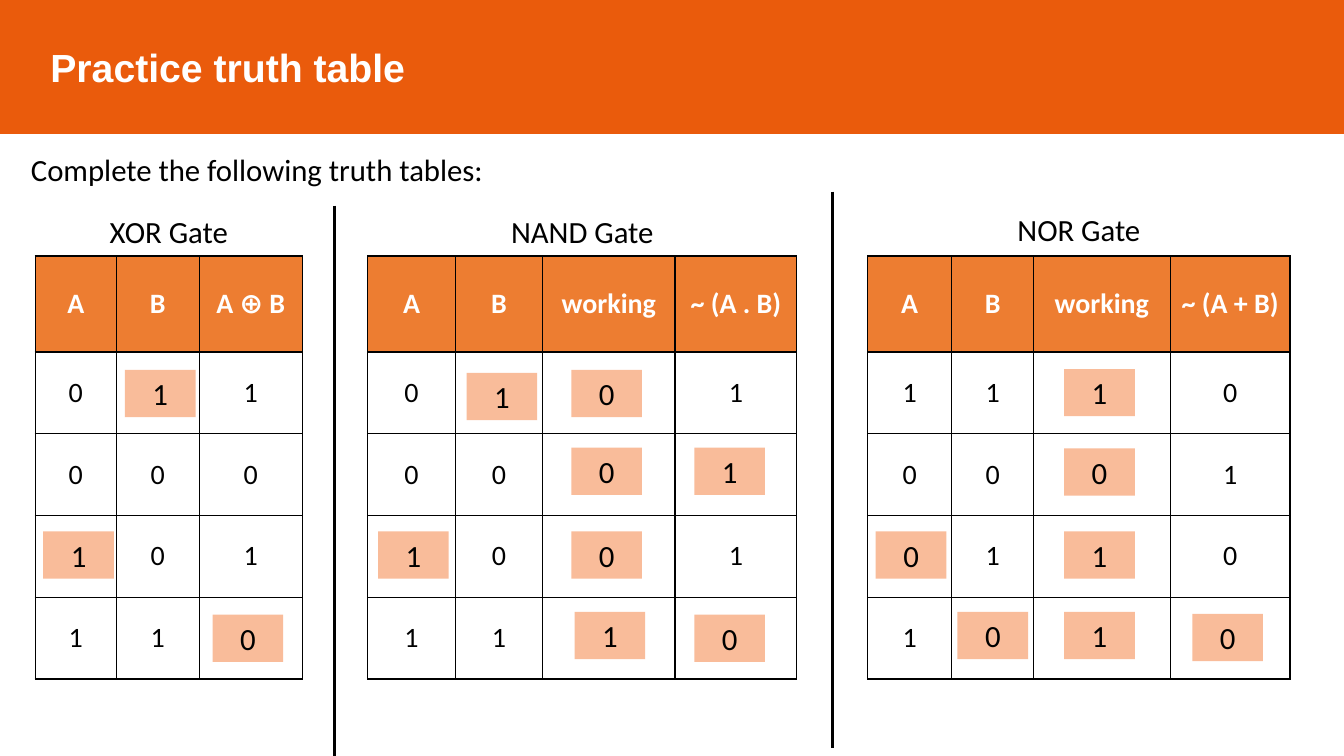
from lxml import etree
from pptx import Presentation
from pptx.dml.color import RGBColor
from pptx.enum import shapes, text
from pptx.oxml import ns
from pptx.util import Cm, Pt

# Content: a plain string is printed in its cell,
# a tuple is an answer card (digit, left, top in cm), None is an empty cell
TITLE = "Practice truth table"
INTRO = "Complete the following truth tables:"
GATES = [
    {"name": "XOR Gate", "left": 0.89, "label_top": 4.78,
     "columns": [2.04, 2.09, 2.6],
     "rows": [
         ["A", "B", "A ⊕ B"],
         ["0", ("1", 3.15, 9.32), "1"],
         ["0", "0", "0"],
         [("1", 1.09, 13.39), "0", "1"],
         ["1", "1", ("0", 5.36, 15.49)],
     ]},
    {"name": "NAND Gate", "left": 9.27, "label_top": 4.78,
     "columns": [2.2, 2.21, 3.33, 3.07],
     "rows": [
         ["A", "B", "working", "~ (A . B)"],
         ["0", ("1", 11.76, 9.4), ("0", 14.4, 9.32), "1"],
         ["0", "0", ("0", 14.4, 11.28), ("1", 17.5, 11.28)],
         [("1", 9.53, 13.39), "0", ("0", 14.4, 13.39), "1"],
         ["1", "1", ("1", 14.48, 15.42), ("0", 17.5, 15.49)],
     ]},
    {"name": "NOR Gate", "left": 21.87, "label_top": 4.72,
     "columns": [2.11, 2.07, 3.44, 3.02],
     "rows": [
         ["A", "B", "working", "~ (A + B)"],
         ["1", "1", ("1", 26.82, 9.3), "0"],
         ["0", "0", ("0", 26.82, 11.3), "1"],
         [("0", 22.07, 13.39), "1", ("1", 26.82, 13.39), "0"],
         ["1", ("0", 24.13, 15.42), ("1", 26.82, 15.42), ("0", 30.05, 15.47)],
     ]},
]
DIVIDERS = [(8.43, 5.18, 19.05), (20.98, 4.83, 18.85)]  # x, top, bottom

COLORS = {"banner": "EA5B0C", "header": "ED7D31", "answer": "F9BC9A",
          "white": "FFFFFF", "black": "000000"}
TITLE_FONT = {"name": "Arial", "size": Pt(28), "bold": True}
BODY_FONT = {"name": "Calibri", "size": Pt(22), "bold": False}
HEADER_FONT = {"name": "Calibri", "size": Pt(20), "bold": True}
CELL_FONT = {"name": "Calibri", "size": Pt(20), "bold": False}

TABLE_TOP, HEADER_HEIGHT, ROW_HEIGHT = 6.45, 2.42, 2.06
ANSWER_WIDTH, ANSWER_HEIGHT = 1.78, 1.19
LABEL_HEIGHT = 1.52


def rgb(color):
    return RGBColor.from_string(COLORS[color])


def paint(target, color):
    target.fill.solid()
    target.fill.fore_color.rgb = rgb(color)


def write(frame, words, font, color="black", align=text.PP_ALIGN.CENTER):
    paragraph = frame.paragraphs[0]
    paragraph.text = words
    paragraph.alignment = align
    for attribute, value in font.items():
        setattr(paragraph.font, attribute, value)
    paragraph.font.color.rgb = rgb(color)
    return paragraph


def add_text(words, left, top, width, height, align=text.PP_ALIGN.CENTER):
    box = slide.shapes.add_textbox(Cm(left), Cm(top), Cm(width), Cm(height))
    box.text_frame.word_wrap = True
    return write(box.text_frame, words, BODY_FONT, align=align)


def add_borders(cell):
    properties = cell._tc.get_or_add_tcPr()
    for position, side in enumerate(("lnL", "lnR", "lnT", "lnB")):
        line = etree.Element(ns.qn("a:" + side), w=str(Pt(1)))
        fill = etree.SubElement(line, ns.qn("a:solidFill"))
        etree.SubElement(fill, ns.qn("a:srgbClr"), val=COLORS["black"])
        properties.insert(position, line)


def add_answer(digit, left, top):
    card = slide.shapes.add_shape(shapes.MSO_SHAPE.RECTANGLE, Cm(left), Cm(top),
                                  Cm(ANSWER_WIDTH), Cm(ANSWER_HEIGHT))
    card.shadow.inherit = False
    paint(card, "answer")
    card.line.fill.background()
    card.text_frame.vertical_anchor = text.MSO_ANCHOR.TOP
    write(card.text_frame, digit, BODY_FONT)


def add_gate(gate):
    columns, rows = gate["columns"], gate["rows"]
    width = sum(columns)
    label = add_text(gate["name"], gate["left"], gate["label_top"], width, LABEL_HEIGHT)
    label.line_spacing = 1.5
    heights = [HEADER_HEIGHT] + [ROW_HEIGHT] * (len(rows) - 1)
    table = slide.shapes.add_table(len(rows), len(columns), Cm(gate["left"]), Cm(TABLE_TOP),
                                   Cm(width), Cm(sum(heights))).table
    for column, column_width in zip(table.columns, columns):
        column.width = Cm(column_width)
    for row, height in zip(table.rows, heights):
        row.height = Cm(height)

    answers = []
    for row_index, values in enumerate(rows):
        is_header = row_index == 0
        for column_index, value in enumerate(values):
            cell = table.cell(row_index, column_index)
            cell.vertical_anchor = text.MSO_ANCHOR.MIDDLE
            cell.margin_left = cell.margin_right = Cm(0.15)
            paint(cell, "header" if is_header else "white")
            add_borders(cell)
            if isinstance(value, tuple):
                answers.append(value)
            else:
                write(cell.text_frame, value, HEADER_FONT if is_header else CELL_FONT,
                      "white" if is_header else "black")
    for answer in answers:
        add_answer(*answer)


presentation = Presentation()
presentation.slide_width, presentation.slide_height = Cm(33.87), Cm(19.05)
slide = presentation.slides.add_slide(presentation.slide_layouts[5])

# Title banner
banner = slide.shapes.title
banner.left, banner.top = Cm(0), Cm(0)
banner.width, banner.height = presentation.slide_width, Cm(3.35)
paint(banner, "banner")
banner.line.color.rgb = rgb("banner")
banner.line.width = Pt(1)
banner.text_frame.auto_size = text.MSO_AUTO_SIZE.NONE
banner.text_frame.vertical_anchor = text.MSO_ANCHOR.MIDDLE
banner.text_frame.margin_left = Cm(1.27)
write(banner.text_frame, TITLE, TITLE_FONT, "white", text.PP_ALIGN.LEFT)

# Instruction
add_text(INTRO, 0.53, 3.68, 32.77, 1.19, text.PP_ALIGN.LEFT)

# Truth tables with their answer cards
for gate in GATES:
    add_gate(gate)

# Dividers between the gates
for x, top, bottom in DIVIDERS:
    divider = slide.shapes.add_connector(shapes.MSO_CONNECTOR.STRAIGHT,
                                         Cm(x), Cm(top), Cm(x), Cm(bottom))
    divider.line.color.rgb = rgb("black")
    divider.line.width = Pt(2.25)
    etree.SubElement(divider._element.spPr, ns.qn("a:effectLst"))

presentation.save("out.pptx")
